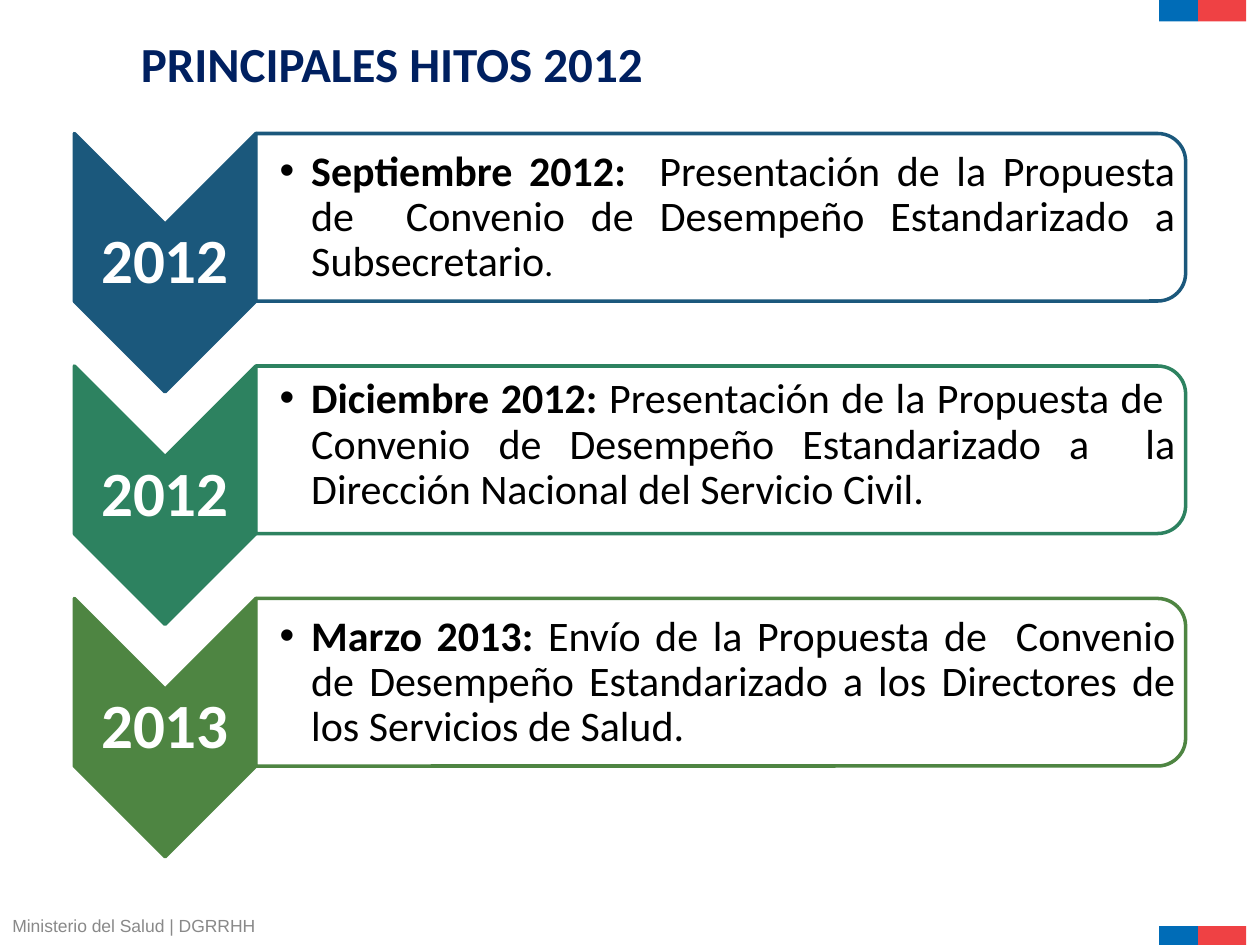
from lxml.etree import SubElement
from pptx import Presentation
from pptx.dml.color import RGBColor
from pptx.enum.shapes import MSO_SHAPE
from pptx.enum.text import MSO_ANCHOR, PP_ALIGN
from pptx.oxml.ns import qn
from pptx.util import Inches, Pt

TITLE = "PRINCIPALES HITOS 2012"
FOOTER = "Ministerio del Salud | DGRRHH"
# year, colour, anchor of the text, runs as (text, bold, size)
MILESTONES = [
    ("2012", "1B587C", MSO_ANCHOR.MIDDLE, [
        ("Septiembre 2012:  ", True, 24),
        ("Presentación de la Propuesta de  Convenio de Desempeño "
         "Estandarizado a Subsecretario", False, 24),
        (". ", False, 20)]),
    ("2012", "2D8260", MSO_ANCHOR.TOP, [
        ("Diciembre 2012: ", True, 24),
        ("Presentación de la Propuesta de  Convenio de Desempeño "
         "Estandarizado a  la Dirección Nacional del Servicio Civil.", False, 24)]),
    ("2013", "4E8542", MSO_ANCHOR.MIDDLE, [
        ("Marzo 2013: ", True, 24),
        ("Envío de la Propuesta de  Convenio de Desempeño Estandarizado "
         "a los Directores de los Servicios de Salud. ", False, 24)]),
]
FLAG = [(9.2, 0.31, "006CB7"), (9.51, 0.38, "EF4144")]  # left, width, colour
FLAG_TOPS, FLAG_H = (0, 7.35), 0.17

# Grid: one row per milestone, a chevron column and a panel column
ROW_TOP, ROW_STEP = 1.06, 1.845
CHEV_X, CHEV_W, CHEV_H = 0.59, 1.44, 2.05
PANEL_X, PANEL_W, PANEL_H = CHEV_X + CHEV_W, 7.38, 1.33

prs = Presentation()
prs.slide_width, prs.slide_height = Inches(10), Inches(7.5)
s = prs.slides.add_slide(prs.slide_layouts[6])


def rgb(color):
    return RGBColor.from_string(color)


def add_shape(kind, x, y, w, h, fill, line=None, turned=False):
    """Place a shape in the box it covers; turned shapes are rotated by 90 degrees."""
    if turned:
        x, y, w, h = x + (w - h) / 2, y + (h - w) / 2, h, w
    sp = s.shapes.add_shape(kind, Inches(x), Inches(y), Inches(w), Inches(h))
    sp.rotation = 90 if turned else 0
    sp.shadow.inherit = False
    sp.fill.solid()
    sp.fill.fore_color.rgb = rgb(fill)
    if line:
        sp.line.color.rgb = rgb(line)
        sp.line.width = Pt(2)
    else:
        sp.line.fill.background()
    return sp


def add_text(runs, x, y, w, h, color, font="Calibri", align=PP_ALIGN.LEFT,
             anchor=MSO_ANCHOR.TOP, insets=(0.1, 0.05, 0.1, 0.05),
             spacing=None, bullet=False, wrap=True):
    tf = s.shapes.add_textbox(Inches(x), Inches(y), Inches(w), Inches(h)).text_frame
    tf.word_wrap, tf.vertical_anchor = wrap, anchor
    tf.margin_left, tf.margin_top, tf.margin_right, tf.margin_bottom = map(Inches, insets)
    p = tf.paragraphs[0]
    p.alignment, p.line_spacing = align, spacing
    if bullet:
        p.level = 1
        pPr = p._p.get_or_add_pPr()
        pPr.set("marL", str(Inches(0.25)))
        pPr.set("indent", str(-Inches(0.25)))
        SubElement(pPr, qn("a:buFont")).set("typeface", "Arial")
        SubElement(pPr, qn("a:buChar")).set("char", "•")
    for text, bold, size in runs:
        r = p.add_run()
        r.text = text
        r.font.name, r.font.size, r.font.bold = font, Pt(size), bold
        r.font.color.rgb = rgb(color)


# Flag bars at top and bottom, and the footer
for top in FLAG_TOPS:
    for x, w, color in FLAG:
        add_shape(MSO_SHAPE.RECTANGLE, x, top, w, FLAG_H, color)
add_text([(FOOTER, False, 10)], 0, 7.21, 2.13, 0.27, "898989", font="Arial", wrap=False)

# Milestones
for i, (year, color, anchor, runs) in enumerate(MILESTONES):
    y = ROW_TOP + i * ROW_STEP
    add_shape(MSO_SHAPE.CHEVRON, CHEV_X, y, CHEV_W, CHEV_H, color, color, turned=True)
    add_text([(year, True, 36)], CHEV_X, y + CHEV_W / 2, CHEV_W, 0.62, "FFFFFF",
             align=PP_ALIGN.CENTER, anchor=MSO_ANCHOR.MIDDLE,
             insets=[0.03] * 4, spacing=0.9)
    panel = add_shape(MSO_SHAPE.ROUND_2_SAME_RECTANGLE, PANEL_X, y, PANEL_W, PANEL_H,
                      "FFFFFF", color, turned=True)
    fill_color = panel.fill._xPr.find(qn("a:solidFill"))[0]
    SubElement(fill_color, qn("a:alpha")).set("val", "90000")
    add_text(runs, PANEL_X, y + 0.07, 7.32, 1.2, "000000", align=PP_ALIGN.JUSTIFY,
             anchor=anchor, insets=(0.19, 0.02, 0.02, 0.02), spacing=0.9, bullet=True)

# Title
add_text([(TITLE, True, 28)], 1.02, 0.21, 4.97, 0.57, "002060", anchor=MSO_ANCHOR.BOTTOM)

prs.save("out.pptx")
